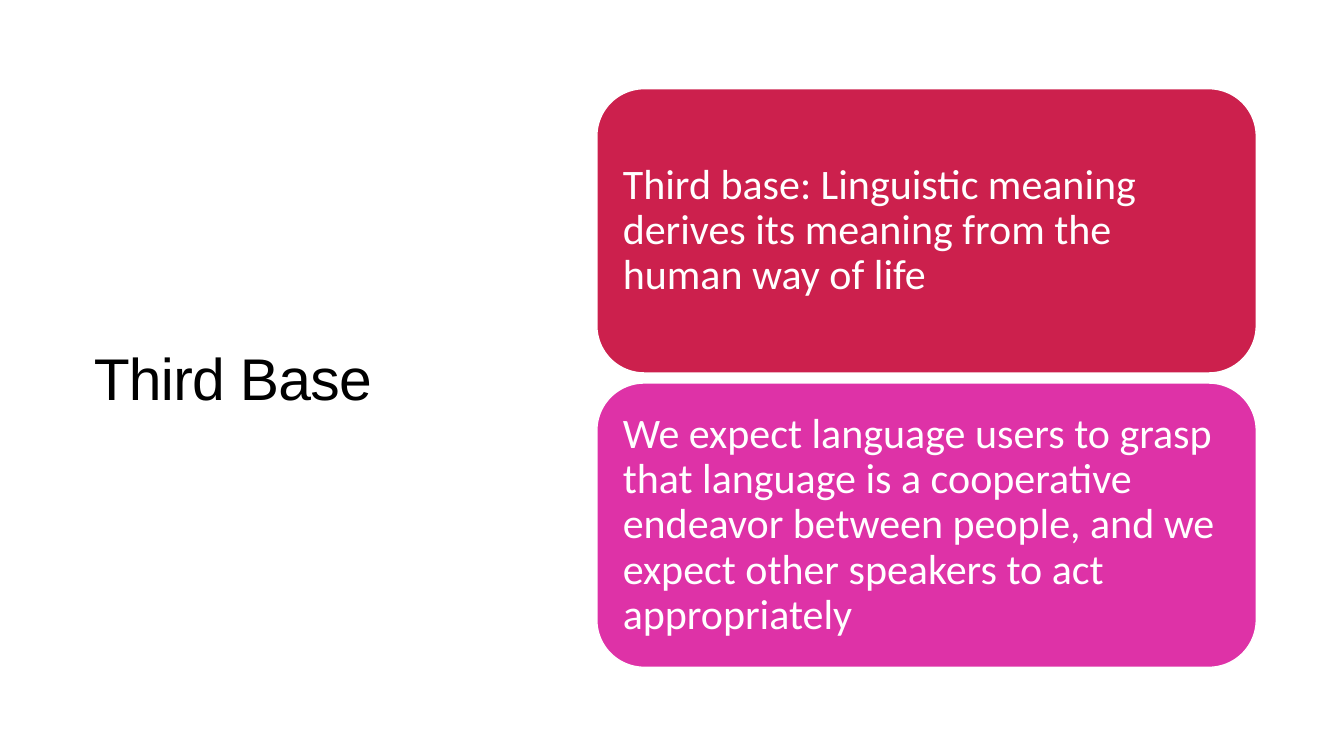
from dataclasses import dataclass

from pptx import Presentation
from pptx.dml.color import RGBColor as Color
from pptx.enum.shapes import MSO_SHAPE as Shape
from pptx.enum.text import MSO_ANCHOR as Anchor, MSO_AUTO_SIZE as AutoSize, PP_ALIGN as Align
from pptx.util import Inches, Pt


@dataclass(frozen=True)
class Theme:
    ink: str = "000000"
    paper: str = "FFFFFF"
    crimson: str = "CC204D"
    magenta: str = "DE32A7"
    title_font: str = "Arial"
    body_font: str = "Calibri"
    title_size: int = 42
    body_size: int = 30


class SlideBuilder:
    """Draws styled elements on the current slide."""

    def __init__(self, page, theme):
        self.page = page
        self.theme = theme

    def set_text(self, shape, text, font, size, color, spacing, inset):
        frame = shape.text_frame
        sides = ("left", "right", "top", "bottom")
        frame_format = {f"margin_{side}": Inches(inset) for side in sides}
        frame_format |= {
            "word_wrap": True,
            "auto_size": AutoSize.NONE,
            "vertical_anchor": Anchor.MIDDLE,
        }
        for name, value in frame_format.items():
            setattr(frame, name, value)
        para = frame.paragraphs[0]
        para.alignment = Align.LEFT
        para.line_spacing = spacing
        span = para.add_run()
        span.text = text
        for name, value in {"name": font, "size": Pt(size), "bold": False}.items():
            setattr(span.font, name, value)
        span.font.color.rgb = Color.from_string(color)
        return span

    def title(self, text, left, top, width, height):
        title = self.page.shapes.title
        bounds = {"left": left, "top": top, "width": width, "height": height}
        for name, value in bounds.items():
            setattr(title, name, Inches(value))
        theme = self.theme
        span = self.set_text(title, text, theme.title_font, theme.title_size, theme.ink, 0.95, 0.1)
        span._r.get_or_add_rPr().set("spc", "-50")

    def card(self, text, fill, left, top, width, height):
        bounds = map(Inches, (left, top, width, height))
        box = self.page.shapes.add_shape(Shape.ROUNDED_RECTANGLE, *bounds)
        box.shadow.inherit = False
        box.fill.solid()
        box.fill.fore_color.rgb = Color.from_string(fill)
        theme = self.theme
        box.line.color.rgb = Color.from_string(theme.paper)
        box.line.width = Pt(1)
        self.set_text(box, text, theme.body_font, theme.body_size, theme.paper, 0.9, 0.12)


def main():
    deck = Presentation()
    deck.slide_width, deck.slide_height = Inches(13.33), Inches(7.5)
    theme = Theme()
    builder = SlideBuilder(deck.slides.add_slide(deck.slide_layouts[5]), theme)
    builder.title("Third Base", 0.83, 0.85, 4.27, 5.84)

    cards = [
        ("Third base: Linguistic meaning derives its meaning from the human way of life",
         theme.crimson),
        ("We expect language users to grasp that language is a cooperative endeavor "
         "between people, and we expect other speakers to act appropriately",
         theme.magenta),
    ]
    first_top, card_height, gap = 0.88, 2.82, 0.1
    for index, (text, fill) in enumerate(cards):
        top = first_top + index * (card_height + gap)
        builder.card(text, fill, 5.92, top, 6.54, card_height)

    deck.save("out.pptx")


if __name__ == "__main__":
    main()
